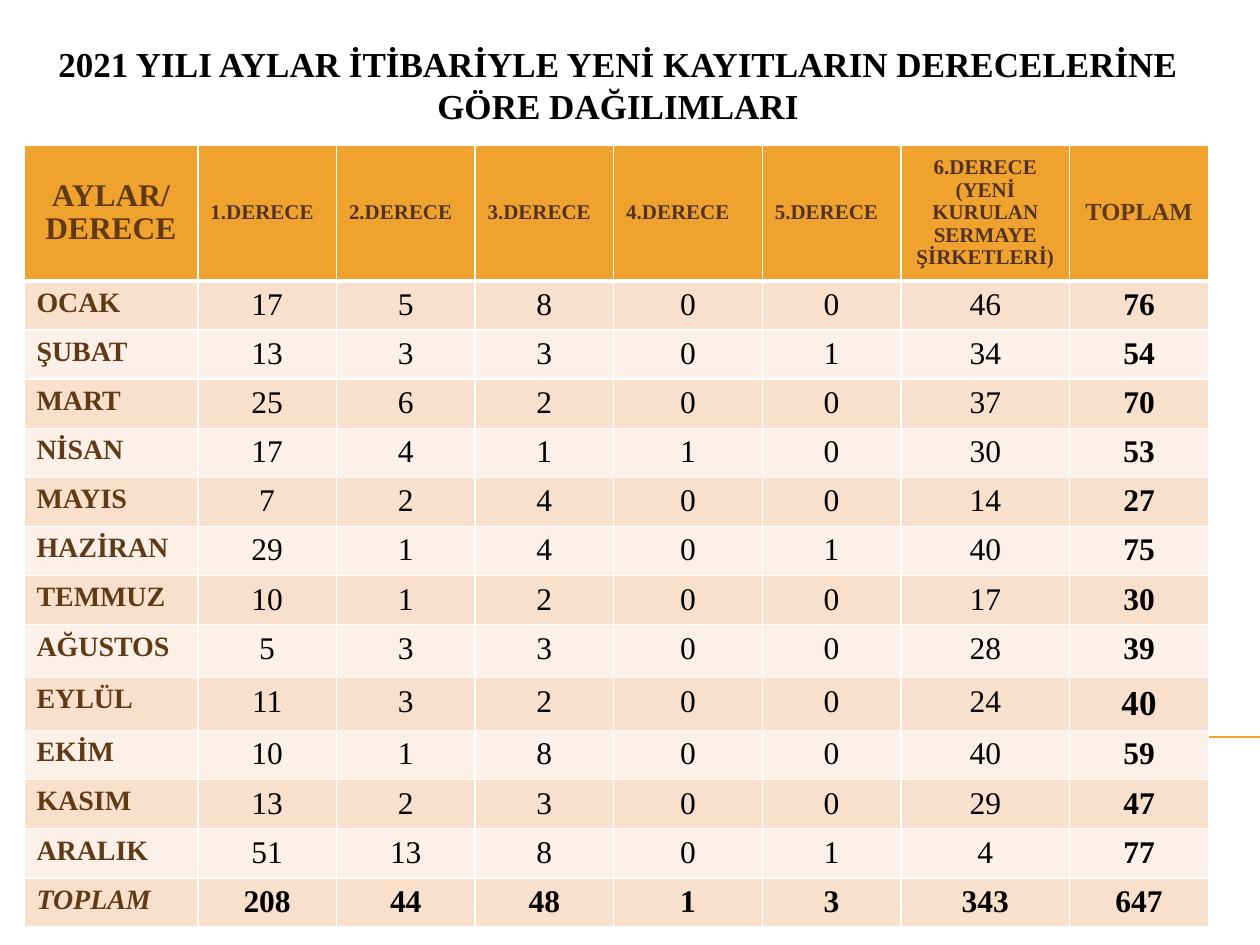
from lxml import etree
from pptx import Presentation
from pptx.dml.color import RGBColor
from pptx.enum import shapes, text
from pptx.oxml import ns
from pptx.util import Inches, Pt

FONT = "Times New Roman"
BLACK, BROWN, DARK_BROWN = "000000", "603A14", "523227"
ORANGE, PEACH, CREAM, WHITE = "F0A22E", "F9E0CD", "FCF0E8", "FFFFFF"
CENTER, LEFT = text.PP_ALIGN.CENTER, text.PP_ALIGN.LEFT

TITLE = "2021 YILI AYLAR İTİBARİYLE YENİ KAYITLARIN DERECELERİNE GÖRE DAĞILIMLARI"
# text, size, colour, alignment
HEADERS = [
    ("AYLAR/ DERECE", 18, BROWN, CENTER),
    *[(f"{degree}.DERECE", 12, DARK_BROWN, LEFT) for degree in range(1, 6)],
    ("6.DERECE (YENİ KURULAN SERMAYE ŞİRKETLERİ)", 12, DARK_BROWN, CENTER),
    ("TOPLAM", 14, BROWN, CENTER),
]
ROWS = [
    ("OCAK", 17, 5, 8, 0, 0, 46, 76),
    ("ŞUBAT", 13, 3, 3, 0, 1, 34, 54),
    ("MART", 25, 6, 2, 0, 0, 37, 70),
    ("NİSAN", 17, 4, 1, 1, 0, 30, 53),
    ("MAYIS", 7, 2, 4, 0, 0, 14, 27),
    ("HAZİRAN", 29, 1, 4, 0, 1, 40, 75),
    ("TEMMUZ", 10, 1, 2, 0, 0, 17, 30),
    ("AĞUSTOS", 5, 3, 3, 0, 0, 28, 39),
    ("EYLÜL", 11, 3, 2, 0, 0, 24, 40),
    ("EKİM", 10, 1, 8, 0, 0, 40, 59),
    ("KASIM", 13, 2, 3, 0, 0, 29, 47),
    ("ARALIK", 51, 13, 8, 0, 1, 4, 77),
    ("TOPLAM", 208, 44, 48, 1, 3, 343, 647),
]
COLUMN_WIDTHS = [1.38, 1.1, 1.1, 1.1, 1.18, 1.1, 1.34, 1.1]
HEADER_HEIGHT, ROW_HEIGHT = 1.08, 0.39
TALL_ROWS = {"AĞUSTOS": 0.42, "EYLÜL": 0.42}
LARGE_TOTALS = {"EYLÜL": 20}


def rgb(colour):
    return RGBColor.from_string(colour)


def write(frame, words, size, colour, align, bold=True, italic=False, spacing=None):
    para = frame.paragraphs[0]
    para.alignment = align
    para.line_spacing = spacing
    span = para.add_run()
    span.text = words
    font = span.font
    font.name, font.size, font.bold, font.italic = FONT, Pt(size), bold, italic
    font.color.rgb = rgb(colour)


def style_cell(cell, fill, bottom=1):
    """Give the cell white borders and a solid fill."""
    properties = cell._tc.get_or_add_tcPr()
    for side, width in (("L", 1), ("R", 1), ("T", 1), ("B", bottom)):
        line = etree.SubElement(properties, ns.qn(f"a:ln{side}"), w=str(Pt(width)))
        solid = etree.SubElement(line, ns.qn("a:solidFill"))
        etree.SubElement(solid, ns.qn("a:srgbClr"), val=WHITE)
    cell.fill.solid()
    cell.fill.fore_color.rgb = rgb(fill)


def add_rule(page):
    rule = page.shapes.add_connector(
        shapes.MSO_CONNECTOR.STRAIGHT,
        Inches(0.56), Inches(5.85), Inches(10), Inches(5.85))
    rule.line.color.rgb = rgb(ORANGE)
    rule.line.width = Pt(0.75)
    etree.SubElement(rule._element.spPr, ns.qn("a:effectLst"))


def add_title(page):
    title = page.shapes.title
    title.left, title.top = Inches(0.28), Inches(0.29)
    title.width, title.height = Inches(9.25), Inches(0.63)
    frame = title.text_frame
    frame.word_wrap = True
    frame.auto_size = text.MSO_AUTO_SIZE.NONE
    frame.vertical_anchor = text.MSO_ANCHOR.TOP
    write(frame, TITLE, 20, BLACK, CENTER)


def add_degree_table(page):
    heights = [HEADER_HEIGHT] + [TALL_ROWS.get(row[0], ROW_HEIGHT) for row in ROWS]
    table = page.shapes.add_table(
        len(heights), len(COLUMN_WIDTHS), Inches(0.19), Inches(1.15),
        Inches(sum(COLUMN_WIDTHS)), Inches(sum(heights))).table
    for column, width in zip(table.columns, COLUMN_WIDTHS):
        column.width = Inches(width)
    for row, height in zip(table.rows, heights):
        row.height = Inches(height)

    for index, (words, size, colour, align) in enumerate(HEADERS):
        cell = table.cell(0, index)
        cell.vertical_anchor = text.MSO_ANCHOR.MIDDLE
        style_cell(cell, ORANGE, bottom=3)
        write(cell.text_frame, words, size, colour, align, spacing=0.96)

    for number, (month, *counts) in enumerate(ROWS, start=1):
        fill = PEACH if number % 2 else CREAM
        is_sum = number == len(ROWS)
        month_cell = table.cell(number, 0)
        style_cell(month_cell, fill)
        write(month_cell.text_frame, month, 16, BROWN, LEFT, italic=is_sum)
        for index, count in enumerate(counts, start=1):
            is_total = index == len(counts)
            size = LARGE_TOTALS.get(month, 18) if is_total else 18
            cell = table.cell(number, index)
            style_cell(cell, fill)
            write(cell.text_frame, str(count), size, BLACK, CENTER,
                  bold=is_sum or is_total)


def main():
    deck = Presentation()
    deck.slide_width, deck.slide_height = Inches(10), Inches(7.5)
    page = deck.slides.add_slide(deck.slide_layouts[5])
    add_rule(page)
    add_title(page)
    add_degree_table(page)
    deck.save("out.pptx")


if __name__ == "__main__":
    main()
